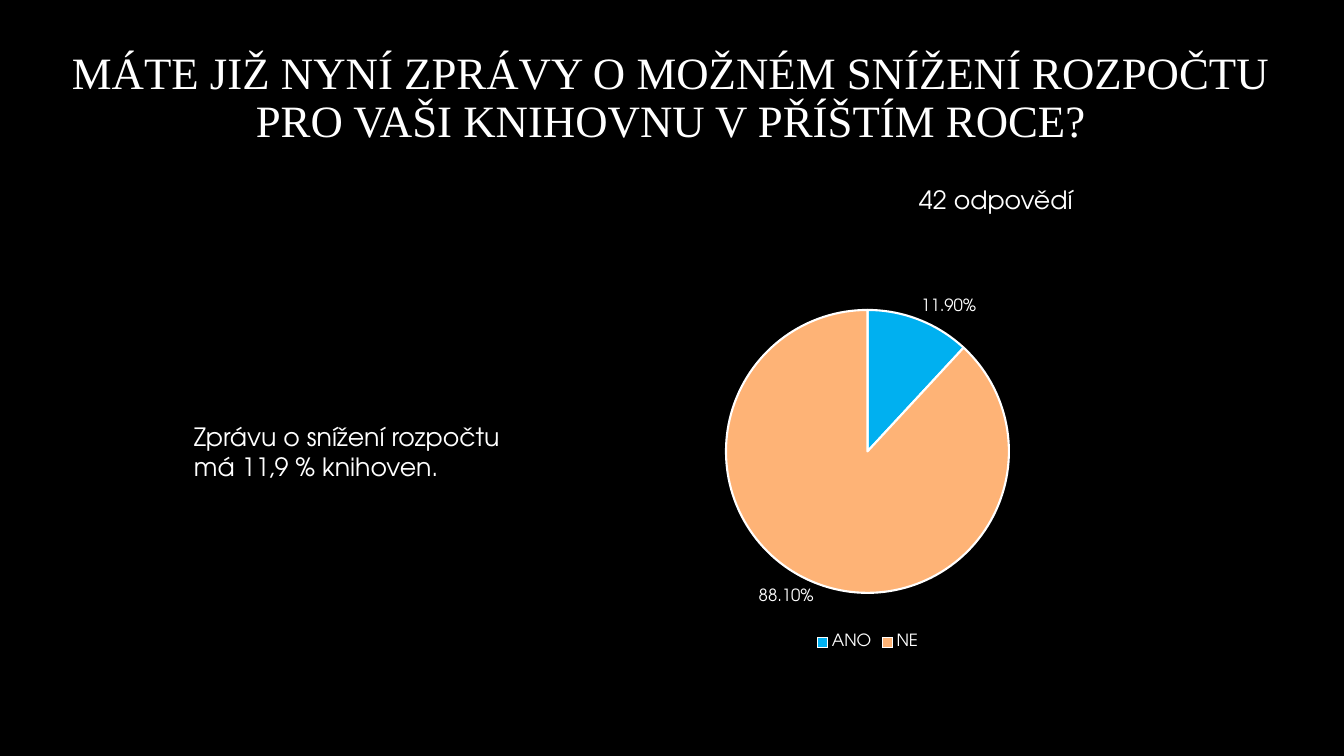
from pptx import Presentation
from pptx.chart.data import CategoryChartData
from pptx.dml.color import RGBColor
from pptx.enum.chart import XL_CHART_TYPE, XL_LABEL_POSITION, XL_LEGEND_POSITION
from pptx.enum.text import MSO_ANCHOR, MSO_AUTO_SIZE, PP_ALIGN
from pptx.oxml import parse_xml
from pptx.oxml.ns import nsdecls
from pptx.util import Pt

PX = 914400 / 100.8
COLORS = {"back": "000000", "text": "FFFFFF", "yes": "00B0F0", "no": "FEB376"}
HEAD, BODY = "Times New Roman", "TeX Gyre Adventor"


def px(num):
    return round(num * PX)


def color(name):
    return RGBColor.from_string(COLORS[name])


class Page:
    """Slide style and one method per kind of element."""

    def __init__(self, deck):
        self.slide = deck.slides.add_slide(deck.slide_layouts[5])
        fill = self.slide.background.fill
        fill.solid()
        fill.fore_color.rgb = color("back")

    def style(self, font, size, face=BODY):
        font.name, font.size = face, Pt(size)
        font.color.rgb = color("text")

    def title(self, text, left, top, width, height):
        shape = self.slide.shapes.title
        shape.left, shape.top = px(left), px(top)
        shape.width, shape.height = px(width), px(height)
        frame = shape.text_frame
        frame.text = text
        frame.word_wrap = True
        frame.auto_size = MSO_AUTO_SIZE.NONE
        frame.vertical_anchor = MSO_ANCHOR.MIDDLE
        para = frame.paragraphs[0]
        para.alignment, para.line_spacing = PP_ALIGN.CENTER, 0.9
        self.style(para.runs[0].font, 32, HEAD)

    def note(self, text, left, top, width, height):
        box = self.slide.shapes.add_textbox(px(left), px(top), px(width), px(height))
        frame = box.text_frame
        frame.text = text
        frame.word_wrap = True
        frame.auto_size = MSO_AUTO_SIZE.SHAPE_TO_FIT_TEXT
        self.style(frame.paragraphs[0].runs[0].font, 18)

    def pie(self, parts, left, top, width, height, plot):
        data = CategoryChartData(number_format="0.00%")
        data.categories = [name for name, _, _ in parts]
        data.add_series("Series 1", [value for _, value, _ in parts])
        chart = self.slide.shapes.add_chart(
            XL_CHART_TYPE.PIE, px(left), px(top), px(width), px(height), data).chart
        self.style(chart.font, 10)
        chart.has_title = False

        # Slices
        pie = chart.plots[0]
        pie.vary_by_categories = True
        for i, (_, _, tint) in enumerate(parts):
            form = pie.series[0].points[i].format
            form.fill.solid()
            form.fill.fore_color.rgb = color(tint)
            form.line.color.rgb = color("text")
            form.line.width = Pt(1.5)

        # Labels and legend
        pie.has_data_labels = True
        labels = pie.data_labels
        labels.show_value, labels.show_percentage = True, False
        labels.number_format, labels.number_format_is_linked = "0.00%", False
        labels.position = XL_LABEL_POSITION.OUTSIDE_END
        self.style(labels.font, 12)
        chart.has_legend = True
        chart.legend.position = XL_LEGEND_POSITION.BOTTOM
        chart.legend.include_in_layout = False
        self.style(chart.legend.font, 12)

        # Plot area, as shares of the chart
        area = chart._chartSpace.chart.plotArea
        for old in area.xpath("c:layout"):
            area.remove(old)
        x, y, w, h = plot
        rules = "".join(f'<c:{tag} val="{val}"/>' for tag, val in (
            ("layoutTarget", "inner"), ("xMode", "edge"), ("yMode", "edge"),
            ("x", (x - left) / width), ("y", (y - top) / height),
            ("w", w / width), ("h", h / height)))
        area.insert(0, parse_xml(
            f'<c:layout {nsdecls("c")}><c:manualLayout>{rules}</c:manualLayout></c:layout>'))


def main():
    deck = Presentation()
    deck.slide_width, deck.slide_height = px(1344), px(756)
    page = Page(deck)
    page.title("MÁTE JIŽ NYNÍ ZPRÁVY O MOŽNÉM SNÍŽENÍ ROZPOČTU "
               "PRO VAŠI KNIHOVNU V PŘÍŠTÍM ROCE?", 17, 40, 1308, 118)
    page.pie([("ANO", 0.119, "yes"), ("NE", 0.881, "no")],
             437, 280, 862, 374, plot=(726, 310, 283, 283))
    page.note("42 odpovědí", 909, 179, 179, 40)
    page.note("Zprávu o snížení rozpočtu má 11,9 % knihoven.", 184, 416, 357, 72)
    deck.save("out.pptx")


if __name__ == "__main__":
    main()
